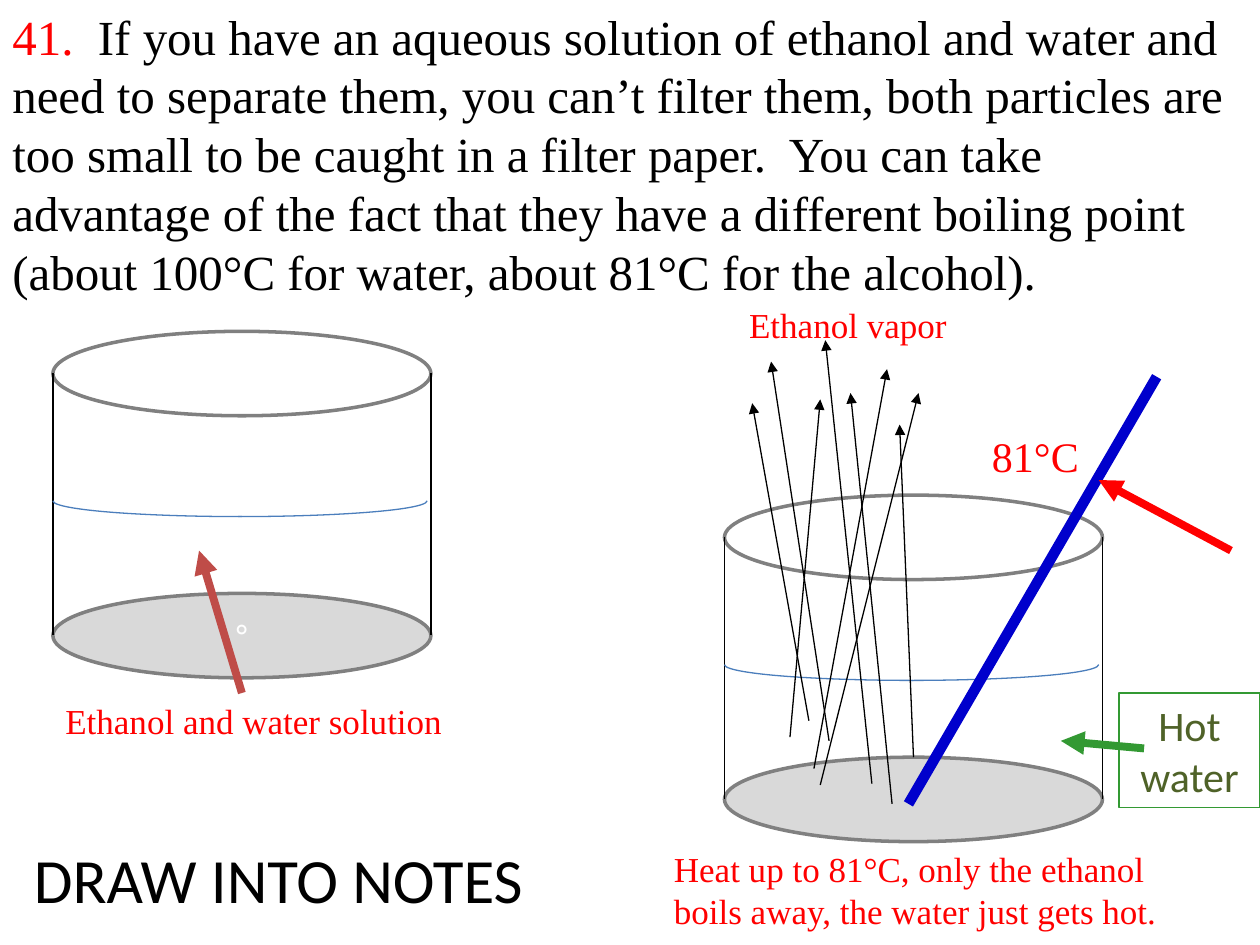
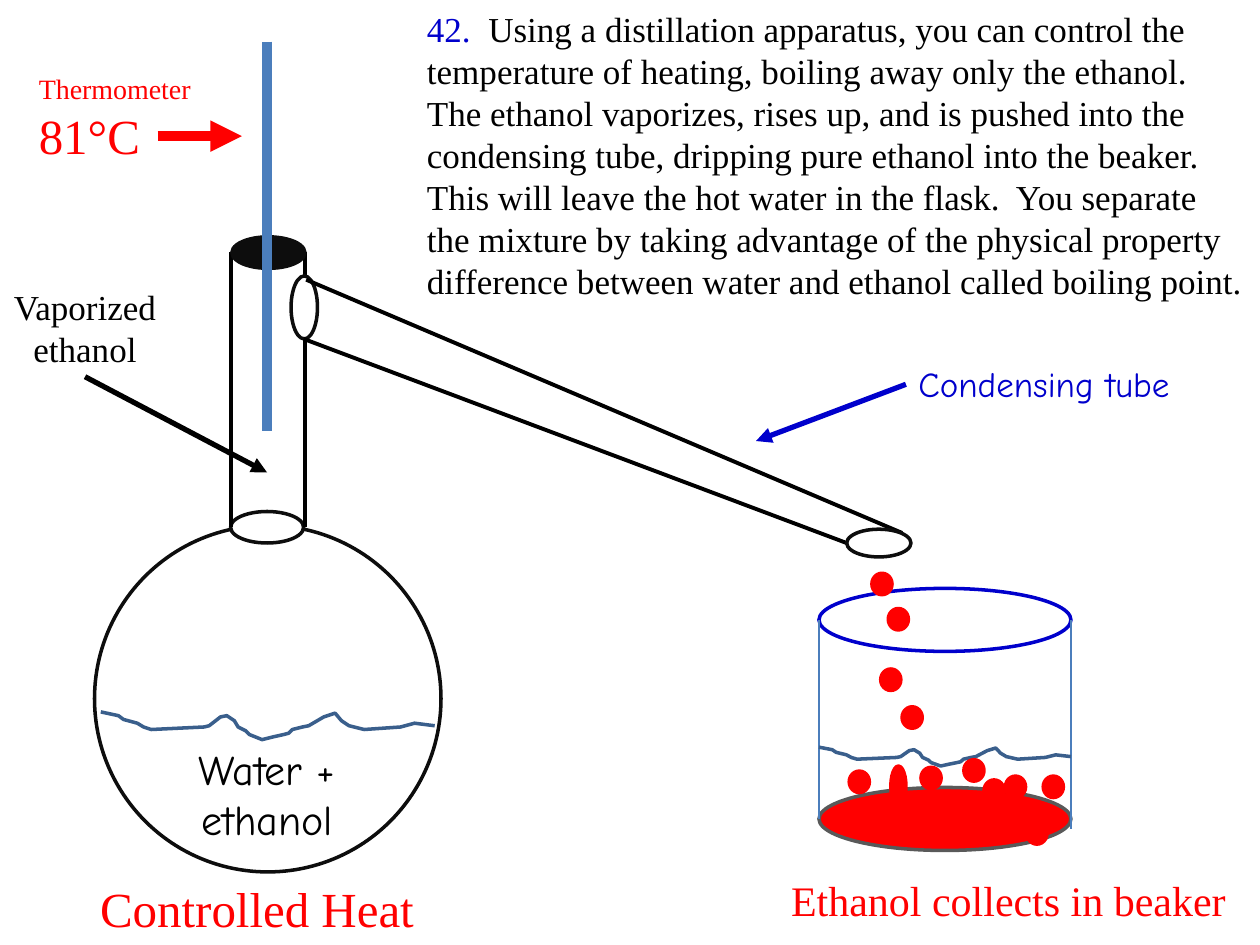
from dataclasses import dataclass
from typing import NamedTuple, Optional

from lxml import etree
from pptx import Presentation
from pptx import util as u
from pptx.dml.color import RGBColor
from pptx.enum import shapes, text
from pptx.oxml.ns import qn

PX = u.Inches(1) // 100  # one px is a hundredth of an inch


@dataclass(frozen=True)
class Theme:
    serif: str = "Times New Roman"
    sans: str = "Calibri"
    hand: str = "Comic Neue"
    symbol: str = "DejaVu Sans"
    black: str = "000000"
    glass: str = "0D0D0D"
    white: str = "FFFFFF"
    red: str = "FF0000"
    brick: str = "BF4C48"
    blue: str = "0000CC"
    steel: str = "4B7EBC"
    wave: str = "3A5F8C"
    green: str = "339933"
    olive: str = "4F6228"
    gray: str = "808080"
    dark_gray: str = "595959"
    pale_gray: str = "D9D9D9"
    banner: int = 36
    large: int = 28
    medium: int = 24
    body: int = 20
    symbol_size: int = 18
    small: int = 16
    hairline: float = 0.75
    outline: float = 2
    tube: float = 2.25
    pointer: float = 3
    arrow: float = 4.5
    rod: float = 6


T = Theme()


class Box(NamedTuple):
    left: int
    top: int
    width: int
    height: int


class Point(NamedTuple):
    x: int
    y: int


class Piece(NamedTuple):
    """A stretch of text; colour and size are given only if they vary."""
    words: str
    color: Optional[str] = None
    size: Optional[int] = None


@dataclass(frozen=True)
class Label:
    at: Box
    pieces: tuple[Piece, ...]
    size: Optional[int] = T.body
    color: Optional[str] = T.red
    font: str = T.serif
    align: text.PP_ALIGN = text.PP_ALIGN.LEFT


@dataclass(frozen=True)
class Line:
    start: Point
    end: Point
    color: str = T.black
    weight: float = T.hairline
    arrow: bool = False


@dataclass(frozen=True)
class Beaker:
    rim: Box
    depth: int
    base_fill: str
    rim_color: str = T.gray
    base_color: str = T.gray
    wall_color: str = T.black
    right_overhang: int = 0


CENTER = text.PP_ALIGN.CENTER
WAVE_SIZE = (265, 22)
WAVE = [(0, 0), (14, 3), (18, 6), (29, 9), (34, 12), (40, 14), (82, 12),
        (86, 11), (95, 4), (100, 3), (106, 7), (109, 12), (115, 15),
        (118, 18), (128, 22), (136, 20), (145, 18), (149, 17), (152, 14),
        (160, 12), (165, 11), (177, 4), (186, 1), (191, 7), (197, 11),
        (209, 14), (238, 12), (249, 9), (265, 11)]


# Drawing helpers
def emu(lengths) -> list[int]:
    return [length * PX for length in lengths]


def style(shape, fill: Optional[str], line: str, weight: float) -> None:
    shape.shadow.inherit = False
    if fill:
        shape.fill.solid()
        shape.fill.fore_color.rgb = RGBColor.from_string(fill)
    else:
        shape.fill.background()
    shape.line.color.rgb = RGBColor.from_string(line)
    shape.line.width = u.Pt(weight)


def set_font(font, color: Optional[str], size: Optional[int]) -> None:
    if size:
        font.size = u.Pt(size)
    if color:
        font.color.rgb = RGBColor.from_string(color)


def write(shape, label: Label) -> None:
    frame = shape.text_frame
    frame.word_wrap = True
    paragraph = frame.paragraphs[0]
    paragraph.alignment = label.align
    paragraph.font.name = label.font
    set_font(paragraph.font, label.color, label.size)
    for piece in label.pieces:
        for row, words in enumerate(piece.words.split("\n")):
            if row:
                paragraph.add_line_break()
            if words:
                run = paragraph.add_run()
                run.text = words
                set_font(run.font, piece.color, piece.size)


def add_label(slide, label: Label):
    box = slide.shapes.add_textbox(*emu(label.at))
    write(box, label)
    box.text_frame.auto_size = text.MSO_AUTO_SIZE.SHAPE_TO_FIT_TEXT
    return box


def add_line(slide, line: Line):
    connector = slide.shapes.add_connector(
        shapes.MSO_CONNECTOR.STRAIGHT, *emu(line.start + line.end))
    connector.line.color.rgb = RGBColor.from_string(line.color)
    connector.line.width = u.Pt(line.weight)
    properties = connector._element.spPr
    if line.arrow:
        etree.SubElement(properties.find(qn("a:ln")), qn("a:tailEnd"), type="triangle")
    etree.SubElement(properties, qn("a:effectLst"))
    return connector


def add_ellipse(slide, at: Box, line: str = T.glass, fill: Optional[str] = None):
    ellipse = slide.shapes.add_shape(shapes.MSO_SHAPE.OVAL, *emu(at))
    style(ellipse, fill, line, T.outline)
    return ellipse


def add_beaker(slide, beaker: Beaker):
    left, top, width, height = beaker.rim
    add_ellipse(slide, beaker.rim, beaker.rim_color)
    base = add_ellipse(slide, Box(left, top + beaker.depth, width, height),
                       beaker.base_color, beaker.base_fill)
    middle = top + height // 2
    for x, extra in ((left, 0), (left + width, beaker.right_overhang)):
        add_line(slide, Line(Point(x, middle), Point(x, middle + beaker.depth + extra),
                             beaker.wall_color))
    return base


def add_liquid_level(slide, rim: Box) -> None:
    """Lower half of an ellipse, as a right and a left quarter arc."""
    quarter = 54  # 90 degrees in adjustment units
    for shift, first in ((-3, 0), (0, quarter)):
        arc = slide.shapes.add_shape(
            shapes.MSO_SHAPE.ARC, *emu((rim.left + shift, rim.top + 122, rim.width, 25)))
        arc.adjustments[0] = first
        arc.adjustments[1] = first + quarter
        style(arc, None, T.steel, T.hairline)


def add_wave(slide, at: Box) -> None:
    scale = (at.width * PX / WAVE_SIZE[0], at.height * PX / WAVE_SIZE[1])
    builder = slide.shapes.build_freeform(*WAVE[0], scale=scale)
    builder.add_line_segments(WAVE[1:], close=False)
    style(builder.convert_to_shape(*emu(at[:2])), None, T.wave, T.outline)


# Slide 1: boiling ethanol out of an open beaker
def boiling_slide(slide) -> None:
    add_label(slide, Label(Box(0, 0, 1000, 246), (
        Piece("41.", T.red),
        Piece("  If you have an aqueous solution of ethanol and water and need to "
              "separate them, you can’t filter them, both particles are too small to "
              "be caught in a filter paper.  You can take advantage of the fact that "
              "they have a different boiling point (about 100°C for water, about 81°C "
              "for the alcohol).", T.black)), T.large, None))

    # Beakers
    cold_rim, hot_rim = Box(42, 263, 300, 67), Box(575, 393, 300, 67)
    cold_base, _ = [add_beaker(slide, Beaker(rim, 208, T.pale_gray))
                    for rim in (cold_rim, hot_rim)]
    write(cold_base, Label(cold_rim, (Piece("°"),), T.symbol_size, T.white,
                           T.symbol, CENTER))
    for rim in (cold_rim, hot_rim):
        add_liquid_level(slide, rim)

    # Thermometer and rising vapor
    add_line(slide, Line(Point(721, 638), Point(918, 299), T.blue, T.rod))
    add_line(slide, Line(Point(977, 437), Point(872, 381), T.red, T.arrow, True))
    for x1, y1, x2, y2 in ((642, 572, 597, 320), (658, 588, 612, 287),
                           (627, 585, 651, 317), (692, 622, 655, 270),
                           (708, 638, 675, 312), (651, 623, 729, 312),
                           (725, 601, 714, 337), (646, 610, 704, 293)):
        add_line(slide, Line(Point(x1, y1), Point(x2, y2), arrow=True))

    # Captions
    hot_water = slide.shapes.add_shape(shapes.MSO_SHAPE.RECTANGLE, *emu((888, 550, 112, 91)))
    style(hot_water, None, T.green, T.hairline)
    write(hot_water, Label(Box(888, 550, 112, 91), (Piece("Hot water"),),
                           T.medium, T.olive, T.sans, CENTER))
    for label in (
        Label(Box(42, 550, 325, 44), (Piece("Ethanol and water solution"),)),
        Label(Box(525, 668, 442, 77), (
            Piece("Heat up to 81°C, only the ethanol boils away, the water just gets hot."),)),
        Label(Box(741, 337, 125, 50), (Piece("81°C"),), T.medium,
              align=text.PP_ALIGN.RIGHT),
        Label(Box(548, 236, 250, 44), (Piece("Ethanol vapor"),), align=CENTER),
        Label(Box(17, 662, 458, 71), (Piece("DRAW INTO NOTES"),), T.banner, T.black, T.sans),
    ):
        add_label(slide, label)
    add_line(slide, Line(Point(908, 594), Point(842, 588), T.green, T.arrow, True))
    add_line(slide, Line(Point(192, 550), Point(158, 437), T.brick, T.arrow, True))


# Slide 2: distillation apparatus
def distillation_slide(slide) -> None:
    # Flask, neck, stopper and thermometer
    add_ellipse(slide, Box(75, 417, 275, 275))
    add_ellipse(slide, Box(183, 406, 58, 25), fill=T.white)
    for x in (183, 242):
        add_line(slide, Line(Point(x, 418), Point(x, 200), weight=T.tube))
    add_ellipse(slide, Box(184, 188, 58, 25), fill=T.glass)
    add_line(slide, Line(Point(212, 33), Point(212, 342), T.steel, T.rod))

    # Condensing tube
    add_ellipse(slide, Box(231, 219, 21, 50), fill=T.white)
    add_line(slide, Line(Point(672, 431), Point(241, 269), weight=T.tube))
    add_line(slide, Line(Point(716, 423), Point(243, 222), weight=T.tube))
    add_ellipse(slide, Box(672, 420, 51, 22), fill=T.white)

    # Beaker, liquid surfaces and drops of ethanol
    add_beaker(slide, Beaker(Box(650, 467, 200, 50), 158, T.red, T.blue,
                             T.dark_gray, T.steel, right_overhang=8))
    add_wave(slide, Box(80, 565, 265, 22))
    add_wave(slide, Box(650, 593, 200, 15))
    add_ellipse(slide, Box(707, 608, 12, 32), T.red, T.red)
    for x, y in ((692, 455), (705, 483), (699, 531), (731, 609), (674, 612), (716, 561),
                 (765, 603), (781, 619), (798, 616), (815, 653), (828, 616)):
        add_ellipse(slide, Box(x, y, 16, 17), T.red, T.red)

    # Captions
    for label in (
        Label(Box(21, 52, 150, 84), (Piece("Thermometer\n", size=T.small),
                                     Piece("81°C", size=T.large)), None),
        Label(Box(33, 692, 342, 57), (Piece("Controlled Heat"),), T.large, align=CENTER),
        Label(Box(112, 585, 200, 91), (Piece("Water + ethanol"),), T.medium,
              T.black, T.hand, CENTER),
        Label(Box(329, 1, 671, 246), (
            Piece("42.", T.blue),
            Piece("  Using a distillation apparatus, you can control the temperature of "
                  "heating, boiling away only the ethanol.  The ethanol vaporizes, rises "
                  "up, and is pushed into the condensing tube, dripping pure ethanol into "
                  "the beaker.  This will leave the hot water in the flask.  You separate\n"
                  "the mixture by taking advantage of the physical property difference "
                  "between water and ethanol called boiling point.", T.black)), color=None),
        Label(Box(618, 689, 375, 50), (Piece("Ethanol collects in beaker"),), T.medium),
    ):
        add_label(slide, label)
    add_line(slide, Line(Point(125, 108), Point(192, 108), T.red, T.rod, True))

    # Captions with a joined pointer
    tube = add_label(slide, Label(Box(719, 283, 256, 44), (Piece("Condensing tube"),),
                                  color=T.blue, font=T.hand))
    vapor = add_label(slide, Label(Box(0, 222, 135, 77), (Piece("Vaporized\nethanol"),),
                                   color=T.black, align=CENTER))
    for caption, side, pointer in (
        (tube, 1, Line(Point(719, 305), Point(600, 350), T.blue, T.pointer, True)),
        (vapor, 2, Line(Point(68, 299), Point(212, 375), T.black, T.pointer, True)),
    ):
        add_line(slide, pointer).begin_connect(caption, side)


def main() -> None:
    deck = Presentation()
    deck.slide_width, deck.slide_height = emu((1000, 750))
    for build in (boiling_slide, distillation_slide):
        build(deck.slides.add_slide(deck.slide_layouts[6]))
    deck.save("out.pptx")


if __name__ == "__main__":
    main()
